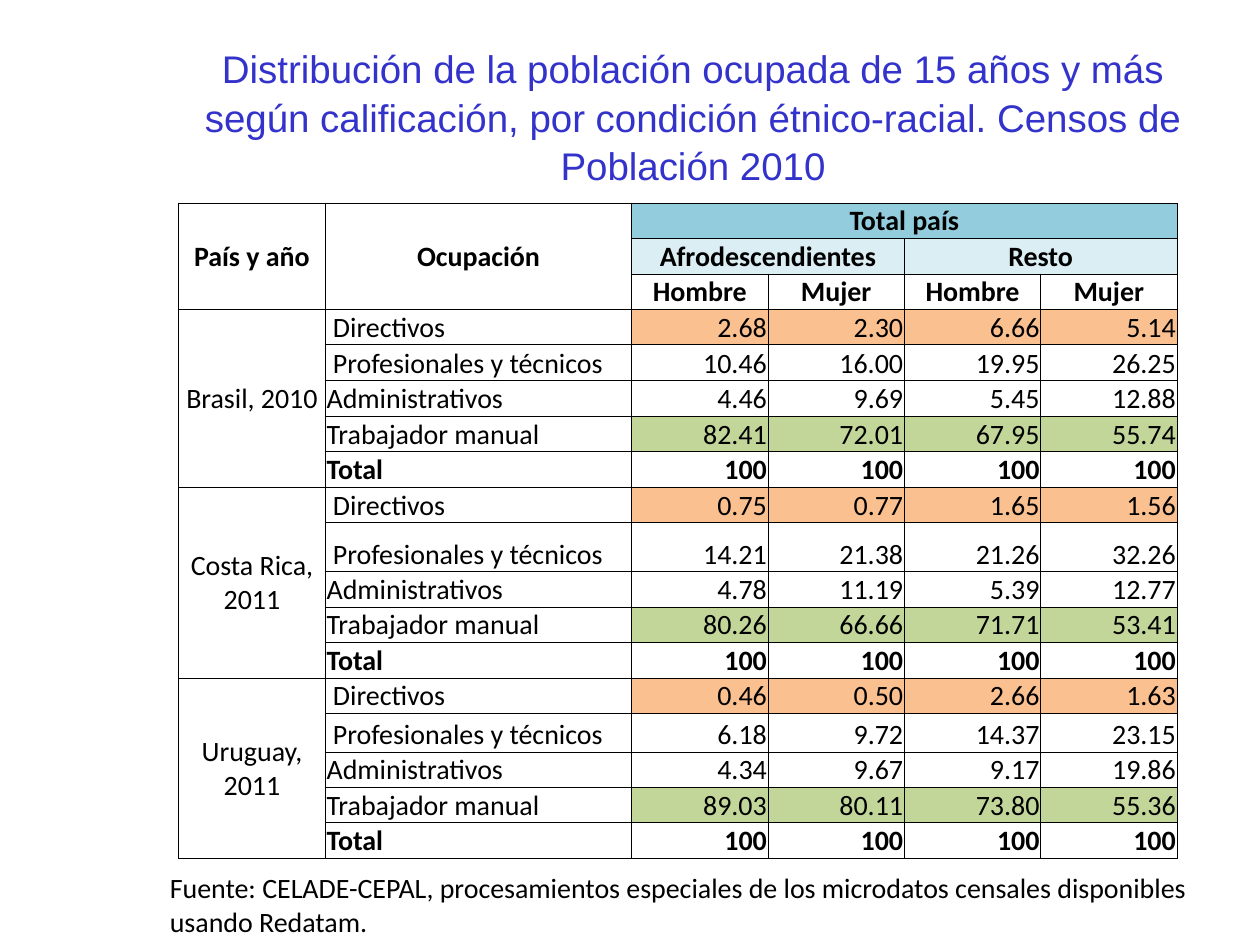
from dataclasses import dataclass
from lxml.etree import SubElement as Sub
from pptx import Presentation
from pptx.dml.color import RGBColor as RGB
from pptx.enum.text import MSO_ANCHOR as Anchor, MSO_AUTO_SIZE as Fit, PP_ALIGN as Align
from pptx.oxml.ns import qn
from pptx.util import Pt


@dataclass(frozen=True)
class Theme:
    head: str = "Arial"
    body: str = "Calibri"
    head_size: float = 22
    body_size: float = 16
    blue: str = "3333CC"
    ink: str = "000000"
    teal: str = "93CDDD"
    pale: str = "DBEEF3"
    peach: str = "FAC090"
    green: str = "C2D69A"
    rule: float = 0.5


JOBS = ["Directivos", "Profesionales y técnicos", "Administrativos",
        "Trabajador manual", "Total"]
TOTAL = ["100"] * 4
DATA = {
    "Brasil, 2010": [
        ["2.68", "2.30", "6.66", "5.14"],
        ["10.46", "16.00", "19.95", "26.25"],
        ["4.46", "9.69", "5.45", "12.88"],
        ["82.41", "72.01", "67.95", "55.74"],
        TOTAL],
    "Costa Rica, 2011": [
        ["0.75", "0.77", "1.65", "1.56"],
        ["14.21", "21.38", "21.26", "32.26"],
        ["4.78", "11.19", "5.39", "12.77"],
        ["80.26", "66.66", "71.71", "53.41"],
        TOTAL],
    "Uruguay, 2011": [
        ["0.46", "0.50", "2.66", "1.63"],
        ["6.18", "9.72", "14.37", "23.15"],
        ["4.34", "9.67", "9.17", "19.86"],
        ["89.03", "80.11", "73.80", "55.36"],
        TOTAL],
}
COLS = [84, 175] + [77.9] * 4
ROW = 20
TALL = {4: 20.5, 9: 28, 14: 22}
HEADS = 3
INDENT = 3.6


class Deck:
    def __init__(self, theme):
        self.theme = theme
        self.file = Presentation()
        self.file.slide_width, self.file.slide_height = Pt(720), Pt(540)
        self.slide = self.file.slides.add_slide(self.file.slide_layouts[5])

    def label(self, frame, text, font, size, color, bold=False, align=Align.LEFT):
        frame.text = text
        frame.word_wrap = True
        para = frame.paragraphs[0]
        para.alignment = align
        for run in para.runs:
            run.font.name, run.font.size = font, Pt(size)
            run.font.bold = bold
            run.font.color.rgb = RGB.from_string(color)

    def title(self, text, left, top, width, height):
        look, box = self.theme, self.slide.shapes.title
        box.left, box.top, box.width, box.height = map(Pt, (left, top, width, height))
        frame = box.text_frame
        self.label(frame, text, look.head, look.head_size, look.blue, align=Align.CENTER)
        frame.auto_size = Fit.NONE
        frame.vertical_anchor = Anchor.TOP
        frame.paragraphs[0].line_spacing = 1.05

    def note(self, text, left, top, width, height):
        look = self.theme
        box = self.slide.shapes.add_textbox(*map(Pt, (left, top, width, height)))
        self.label(box.text_frame, text, look.body, look.body_size, look.ink)

    def grid(self, left, top, cols, rows):
        """Add an unstyled table in which every cell has a thin border."""
        table = self.slide.shapes.add_table(
            len(rows), len(cols), *map(Pt, (left, top, sum(cols), sum(rows)))).table
        table.first_row = table.horz_banding = False
        for col, width in zip(table.columns, cols):
            col.width = Pt(width)
        for row, height in zip(table.rows, rows):
            row.height = Pt(height)
        for cell in table.iter_cells():
            self.edge(cell)
            cell.fill.background()
        return table

    def edge(self, cell):
        props = cell._tc.get_or_add_tcPr()
        for side in "LRTB":
            line = Sub(props, qn(f"a:ln{side}"), w=str(Pt(self.theme.rule)))
            paint = Sub(line, qn("a:solidFill"))
            Sub(paint, qn("a:srgbClr"), val=self.theme.ink)

    def cell(self, table, row, col, text, align=Align.CENTER, bold=False,
             fill=None, span=(1, 1), indent=0):
        look, cell = self.theme, table.cell(row, col)
        if span != (1, 1):
            cell.merge(table.cell(row + span[0] - 1, col + span[1] - 1))
        cell.margin_left = Pt(0.7 + indent)
        cell.margin_right = cell.margin_top = Pt(0.7)
        cell.margin_bottom = 0
        cell.vertical_anchor = Anchor.MIDDLE if span[0] > 1 else Anchor.BOTTOM
        if fill:
            cell.fill.solid()
            cell.fill.fore_color.rgb = RGB.from_string(fill)
        self.label(cell.text_frame, text, look.body, look.body_size, look.ink, bold, align)


def heads(deck, table):
    look = deck.theme
    for col, text in enumerate(["País y año", "Ocupación"]):
        deck.cell(table, 0, col, text, bold=True, span=(HEADS, 1))
    deck.cell(table, 0, 2, "Total país", bold=True, fill=look.teal, span=(1, 4))
    for col, group in zip((2, 4), ["Afrodescendientes", "Resto"]):
        deck.cell(table, 1, col, group, bold=True, fill=look.pale, span=(1, 2))
        for step, sex in enumerate(["Hombre", "Mujer"]):
            deck.cell(table, 2, col + step, sex, bold=True)


def body(deck, table):
    look = deck.theme
    fills = {"Directivos": look.peach, "Trabajador manual": look.green}
    for block, (place, lines) in enumerate(DATA.items()):
        start = HEADS + block * len(JOBS)
        deck.cell(table, start, 0, place, span=(len(JOBS), 1))
        for step, (job, line) in enumerate(zip(JOBS, lines)):
            row, bold = start + step, job == "Total"
            deck.cell(table, row, 1, job, Align.LEFT, bold,
                      indent=INDENT if step < 2 else 0)
            for col, value in enumerate(line, 2):
                deck.cell(table, row, col, value, Align.RIGHT, bold, fills.get(job))


def main():
    deck = Deck(Theme())
    deck.title("Distribución de la población ocupada de 15 años y más según "
               "calificación, por condición étnico-racial. Censos de Población 2010",
               96, 21, 600, 87)
    count = HEADS + len(DATA) * len(JOBS)
    rows = [TALL.get(row, ROW) for row in range(count)]
    table = deck.grid(102, 116, COLS, rows)
    heads(deck, table)
    body(deck, table)
    deck.note("Fuente: CELADE-CEPAL, procesamientos especiales de los microdatos "
              "censales disponibles usando Redatam.", 90, 494, 620, 46)
    deck.file.save("out.pptx")


if __name__ == "__main__":
    main()
